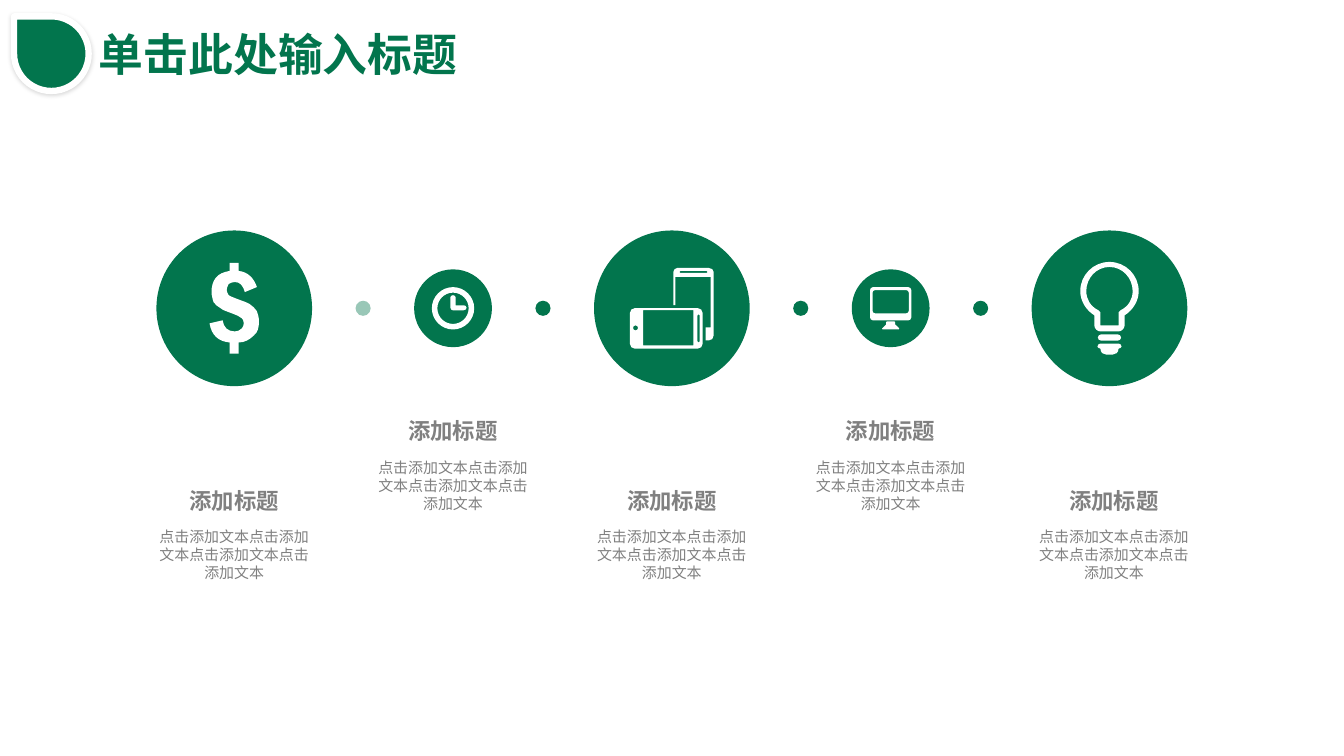
"""Build a slide with five icon circles in a row, each with a heading and a caption."""
from dataclasses import dataclass

from lxml import etree
from pptx import Presentation
from pptx.dml.color import RGBColor
from pptx.enum.shapes import MSO_SHAPE
from pptx.enum.text import MSO_ANCHOR, MSO_AUTO_SIZE, PP_ALIGN
from pptx.oxml.ns import qn
from pptx.util import Pt

OVAL, TEARDROP = MSO_SHAPE.OVAL, MSO_SHAPE.TEAR
TOP, MIDDLE = MSO_ANCHOR.TOP, MSO_ANCHOR.MIDDLE
LEFT, CENTER = PP_ALIGN.LEFT, PP_ALIGN.CENTER
NO_FIT = MSO_AUTO_SIZE.NONE


@dataclass(frozen=True)
class Theme:
    """Colours, font and type sizes."""
    green: RGBColor = RGBColor(0x02, 0x75, 0x4D)
    grey: RGBColor = RGBColor(0x80, 0x80, 0x80)
    white: RGBColor = RGBColor(0xFF, 0xFF, 0xFF)
    font: str = "Arial"
    title: float = 32
    heading: float = 16
    caption: float = 10.7


def rounded(left, top, right, bottom, radius):
    """Return a rounded rectangle as a start point, lines and cubic corners."""
    near, far = 0.45 * radius, radius
    return [
        (right, bottom - far),
        (right, bottom - near, right - near, bottom, right - far, bottom),
        (left + far, bottom),
        (left + near, bottom, left, bottom - near, left, bottom - far),
        (left, top + far),
        (left, top + near, left + near, top, left + far, top),
        (right - far, top),
        (right - near, top, right, top + near, right, top + far),
    ]


def paint(shape, color):
    """Give a shape a plain fill, without line or shadow."""
    shape.shadow.inherit = False
    shape.fill.solid()
    shape.fill.fore_color.rgb = color
    shape.line.fill.background()


theme = Theme()
dollar = [[
    (22.5, 3), (23.5, 6, 24.5, 9, 24.5, 13), (24.5, 19, 23.5, 24, 19.5, 27),
    (15.5, 31, 10.5, 34, 4.5, 34), (4.5, 45), (-4.5, 45), (-4.5, 34),
    (-15.5, 33, -22.5, 27, -24.5, 15), (-11.5, 12),
    (-10.5, 19, -6.5, 23, 0.5, 23), (3.5, 23, 5.5, 22, 7.5, 20),
    (8.5, 19, 9.5, 17, 9.5, 15), (9.5, 12, 8.5, 11, 7.5, 10),
    (5.5, 8, 2.5, 7, -2.5, 5), (-7.5, 3, -11.5, 2, -13.5, 0),
    (-16.5, -1, -18.5, -4, -20.5, -6), (-21.5, -9, -22.5, -13, -22.5, -16),
    (-22.5, -21, -21.5, -26, -18.5, -30), (-15.5, -34, -10.5, -36, -4.5, -37),
    (-4.5, -45), (4.5, -45), (4.5, -37), (13.5, -36, 19.5, -30, 22.5, -21),
    (10.5, -16), (8.5, -23, 5.5, -26, 0.5, -26),
    (-2.5, -26, -3.5, -25, -5.5, -24), (-6.5, -22, -7.5, -20, -7.5, -18),
    (-7.5, -16, -6.5, -15, -5.5, -13), (-4.5, -12, -1.5, -11, 3.5, -9),
    (8.5, -7, 12.5, -6, 15.5, -4), (18.5, -2, 20.5, 0, 22.5, 3),
]]
clock = [
    rounded(-21, -21, 21, 21, 21),
    rounded(-15.5, -15.5, 15.5, 15.5, 15.5),
    [(13.5, -0.5), (13.5, 1, 12, 2, 10.5, 2), (0, 2),
     (-1.5, 2, -2.5, 1, -2.5, -0.5), (-2.5, -11),
     (-2.5, -12, -1.5, -13, 0, -13), (1.5, -13, 2.5, -12, 2.5, -11),
     (2.5, -3), (10.5, -3), (12, -3, 13.5, -2, 13.5, -0.5)],
]
phones = [
    [(41.5, -36), (41.5, -38, 39.5, -40, 36.5, -40), (5.5, -40),
     (3.5, -40, 1.5, -38, 1.5, -36), (1.5, -3), (3.5, -3), (3.5, -31),
     (38.5, -31), (38.5, 19), (33.5, 19), (33.5, 32), (36.5, 32),
     (39.5, 32, 41.5, 30, 41.5, 27)],
    rounded(7.5, -37, 35.5, -35, 1),
    rounded(-41.5, 0, 30.5, 40, 4.5),
    rounded(25.5, 6, 27.5, 34, 1),
    rounded(-38.5, 17, -33.5, 22, 2.5),
    [(-28.5, 2), (21.5, 2), (21.5, 37), (-28.5, 37)],
]
monitor = [
    rounded(-20.5, -21, 20.5, 12, 3),
    rounded(-18, -18, 18, 5, 2.5),
    [(-2.5, 13), (2.5, 13), (3.5, 13, 4.5, 13, 4.5, 14), (4.5, 15),
     (4.5, 16, 4.5, 17, 5.5, 17), (8.5, 20), (8, 21), (-8, 21),
     (-8.5, 20), (-5.5, 17), (-4.5, 17, -4.5, 16, -4.5, 15),
     (-4.5, 14), (-4.5, 13, -3.5, 13, -2.5, 13)],
]
bulb = [
    rounded(-11.5, 26, 11.5, 32, 3),
    [(9, 35), (-9, 35), (-10, 35, -12, 36, -12, 38),
     (-12, 39, -10, 40, -9, 40), (-9, 44, -6, 46, -3, 46), (3, 46),
     (6, 46, 9, 44, 9, 40), (10, 40, 12, 39, 12, 38),
     (12, 36, 10, 35, 9, 35)],
    [(0, -41), (13, -41, 23, -30, 23, -17), (23, -9, 19, -2, 11, 2),
     (9, 4), (9, 17), (-9, 17), (-9, 4), (-11, 2),
     (-19, -2, -23, -9, -23, -17), (-23, -30, -13, -41, 0, -41)],
    [(0, -46), (-16, -46, -29, -33, -29, -17), (-29, -7, -23, 2, -15, 7),
     (-15, 17), (-15, 20, -12, 23, -9, 23), (9, 23),
     (12, 23, 15, 20, 15, 17), (15, 7), (23, 2, 29, -7, 29, -17),
     (29, -33, 16, -46, 0, -46)],
]

deck = Presentation()
deck.slide_width, deck.slide_height = Pt(960), Pt(540)
page = deck.slides.add_slide(deck.slide_layouts[5])
shapes = page.shapes

row_y, first_x, pitch = 220.2, 167.3, 156.3
icon_unit = 0.72
diameters = (111.2, 55.6, 111.2, 55.6, 111.2)
centers = [first_x + pitch * index for index in range(5)]
ovals = list(zip(centers, diameters))
for index in range(4):
    right_edge = centers[index] + diameters[index] / 2
    left_edge = centers[index + 1] - diameters[index + 1] / 2
    ovals.append(((right_edge + left_edge) / 2, 10.8))

for index, (x, diameter) in enumerate(ovals):
    oval = shapes.add_shape(OVAL, Pt(x - diameter / 2), Pt(row_y - diameter / 2),
                            Pt(diameter), Pt(diameter))
    paint(oval, theme.green)
    if index == len(centers):
        color = oval.element.spPr.find(qn("a:solidFill"))[0]
        etree.SubElement(color, qn("a:alpha"), val="40000")

for x, contours in zip(centers, (dollar, clock, phones, monitor, bulb)):
    builder = None
    segments = []
    for contour in contours:
        outline = [[(Pt(x + icon_unit * dx), Pt(row_y + icon_unit * dy))
                    for dx, dy in zip(segment[::2], segment[1::2])]
                   for segment in contour]
        ends = [segment[-1] for segment in outline]
        if builder is None:
            builder = shapes.build_freeform(*ends[0])
        else:
            builder.move_to(*ends[0])
        builder.add_line_segments(ends[1:], close=True)
        segments += outline[1:]
    icon = builder.convert_to_shape()
    paint(icon, theme.white)
    for line, segment in zip(list(icon.element.iter(qn("a:lnTo"))), segments):
        if len(segment) == 3:
            cubic = etree.Element(qn("a:cubicBezTo"))
            for point_x, point_y in segment:
                etree.SubElement(cubic, qn("a:pt"), x=str(point_x - icon.left),
                                 y=str(point_y - icon.top))
            line.getparent().replace(line, cubic)

for index, x in enumerate(centers):
    text_x = x + 3.2 if index == 4 else x
    top = 285.1 if index % 2 else 334.8
    for text, y, height, size, bold, anchor, spacing in (
        ("添加标题", top, 35.3, theme.heading, True, MIDDLE, 1.5),
        ("点击添加文本" * 4, top + 37.4, 48.2, theme.caption, False, TOP, 1),
    ):
        box = shapes.add_textbox(Pt(text_x - 64.4), Pt(y), Pt(128.8), Pt(height))
        frame = box.text_frame
        frame.word_wrap, frame.vertical_anchor = True, anchor
        frame.margin_left = frame.margin_right = Pt(9.6)
        frame.margin_top = frame.margin_bottom = Pt(4.8)
        para = frame.paragraphs[0]
        para.alignment, para.line_spacing = CENTER, spacing
        span = para.add_run()
        span.text = text
        span.font.name, span.font.size, span.font.bold = theme.font, Pt(size), bold
        span.font.color.rgb = theme.grey

title = shapes.title
title.left, title.top, title.width, title.height = Pt(63.4), Pt(15.6), Pt(272.9), Pt(46.1)
frame = title.text_frame
frame.word_wrap, frame.auto_size, frame.vertical_anchor = False, NO_FIT, TOP
para = frame.paragraphs[0]
para.alignment = LEFT
span = para.add_run()
span.text = "单击此处输入标题"
span.font.name, span.font.size, span.font.bold = theme.font, Pt(theme.title), True
span.font.color.rgb = theme.green

drop = shapes.add_shape(TEARDROP, Pt(10.1), Pt(11.7), Pt(53.3), Pt(53.3))
paint(drop, theme.green)
drop.line.color.rgb, drop.line.width = theme.white, Pt(4.5)
drop.element.spPr.find(qn("a:xfrm")).set("flipH", "1")
effects = drop.element.spPr.find(qn("a:effectLst"))
shadow = etree.SubElement(effects, qn("a:outerShdw"), blurRad=str(Pt(3)),
                          dist=str(Pt(1)), dir="5400000", rotWithShape="0")
black = etree.SubElement(shadow, qn("a:srgbClr"), val="000000")
etree.SubElement(black, qn("a:alpha"), val="15000")

deck.save("out.pptx")
